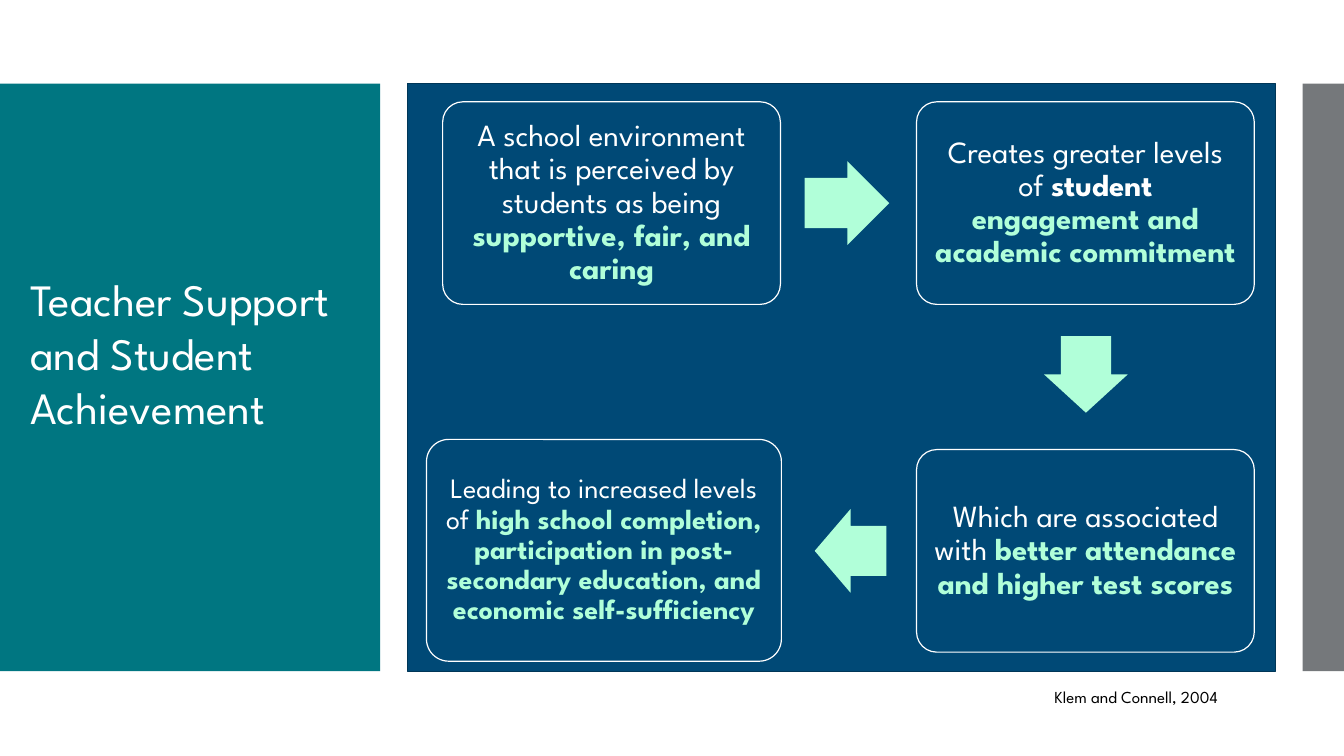
from dataclasses import dataclass

import pptx
import pptx.dml.color
import pptx.enum.shapes
import pptx.enum.text
import pptx.util

Inches = pptx.util.Inches
Pt = pptx.util.Pt
Shape = pptx.enum.shapes.MSO_SHAPE
Align = pptx.enum.text.PP_ALIGN
Anchor = pptx.enum.text.MSO_ANCHOR

FONT = "League Spartan"
COLORS = {
    "navy": "004976",
    "navy_edge": "003657",
    "teal": "007681",
    "gray": "75787B",
    "mint": "B1FFD9",
    "white": "FFFFFF",
    "black": "000000",
}


@dataclass(frozen=True)
class Box:
    left: float
    top: float
    width: float
    height: float

    def lengths(self) -> tuple:
        return tuple(Inches(v) for v in (self.left, self.top, self.width, self.height))


@dataclass(frozen=True)
class Panel:
    box: Box
    fill: str
    edge: str | None = None


@dataclass(frozen=True)
class Phrase:
    text: str
    color: str = "mint"
    bold: bool = True


@dataclass(frozen=True)
class Stage:
    box: Box
    phrases: tuple[Phrase, ...]
    size: int = 22
    inset: float = 0.09


@dataclass(frozen=True)
class Arrow:
    box: Box
    rotation: int


PANELS = (
    Panel(Box(4.04, 0.83, 8.61, 5.83), "navy", "navy_edge"),
    Panel(Box(0, 0.83, 3.77, 5.83), "teal"),
    Panel(Box(12.92, 0.83, 0.42, 5.83), "gray"),
)
STAGES = (
    Stage(Box(4.39, 1.01, 3.35, 2.01), (
        Phrase("A school environment that is perceived by students as being ", "white", False),
        Phrase("supportive, fair, and caring"),
    )),
    Stage(Box(9.09, 1.01, 3.35, 2.01), (
        Phrase("Creates greater levels of ", "white", False),
        Phrase("student ", "white"),
        Phrase("engagement and academic commitment"),
    )),
    Stage(Box(9.09, 4.46, 3.35, 2.01), (
        Phrase("Which are associated with ", "white", False),
        Phrase("better attendance and higher test scores"),
    )),
    Stage(Box(4.23, 4.36, 3.52, 2.2), (
        Phrase("Leading to increased levels of ", "white", False),
        Phrase("high school completion, participation in post-secondary education, "
               "and economic self-sufficiency"),
    ), size=20, inset=0.08),
)
ARROWS = (
    Arrow(Box(7.98, 1.6, 0.84, 0.83), 0),
    Arrow(Box(10.39, 3.3, 0.76, 0.83), 90),
    Arrow(Box(8.08, 5.05, 0.71, 0.83), 180),
)


def rgb(name: str) -> pptx.dml.color.RGBColor:
    return pptx.dml.color.RGBColor.from_string(COLORS[name])


def add_filled(slide, kind, box: Box, fill: str, edge: str | None = None):
    filled = slide.shapes.add_shape(kind, *box.lengths())
    filled.shadow.inherit = False
    filled.fill.solid()
    filled.fill.fore_color.rgb = rgb(fill)
    if edge:
        filled.line.color.rgb = rgb(edge)
        filled.line.width = Pt(0.85)
    else:
        filled.line.fill.background()
    return filled


def add_stage(slide, stage: Stage) -> None:
    card = add_filled(slide, Shape.ROUNDED_RECTANGLE, stage.box, "navy", "white")
    card.adjustments[0] = 0.1
    frame = card.text_frame
    frame.word_wrap = True
    frame.vertical_anchor = Anchor.MIDDLE
    frame.margin_left = frame.margin_right = Inches(stage.inset)
    frame.margin_top = frame.margin_bottom = Inches(stage.inset)
    sentence = frame.paragraphs[0]
    sentence.alignment = Align.CENTER
    sentence.line_spacing = 0.9
    sentence.font.name = FONT
    sentence.font.size = Pt(stage.size)
    for phrase in stage.phrases:
        run = sentence.add_run()
        run.text = phrase.text
        run.font.bold = phrase.bold
        run.font.color.rgb = rgb(phrase.color)


def add_arrow(slide, arrow: Arrow) -> None:
    pointer = add_filled(slide, Shape.RIGHT_ARROW, arrow.box, "mint")
    pointer.adjustments[0] = 0.6
    pointer.adjustments[1] = 0.5
    pointer.rotation = arrow.rotation


def write_line(holder, text: str, size: int, color: str) -> None:
    frame = holder.text_frame
    frame.text = text
    frame.word_wrap = True
    frame.auto_size = pptx.enum.text.MSO_AUTO_SIZE.NONE
    frame.vertical_anchor = Anchor.TOP
    line = frame.paragraphs[0]
    line.alignment = Align.LEFT
    line.font.name = FONT
    line.font.size = Pt(size)
    line.font.color.rgb = rgb(color)


def main() -> None:
    deck = pptx.Presentation()
    deck.slide_width = Inches(13.33)
    deck.slide_height = Inches(7.5)
    slide = deck.slides.add_slide(deck.slide_layouts[5])

    for panel in PANELS:
        add_filled(slide, Shape.RECTANGLE, panel.box, panel.fill, panel.edge)

    title = slide.shapes.title
    title.left, title.top, title.width, title.height = Box(0.2, 2.65, 3.51, 2.26).lengths()
    write_line(title, "Teacher Support and Student Achievement", 32, "white")
    title.element.getparent().append(title.element)

    for stage in STAGES:
        add_stage(slide, stage)
    for arrow in ARROWS:
        add_arrow(slide, arrow)

    citation = slide.shapes.add_textbox(*Box(10.36, 6.76, 2.4, 0.3).lengths())
    write_line(citation, "Klem and Connell, 2004", 12, "black")

    deck.save("out.pptx")


if __name__ == "__main__":
    main()
